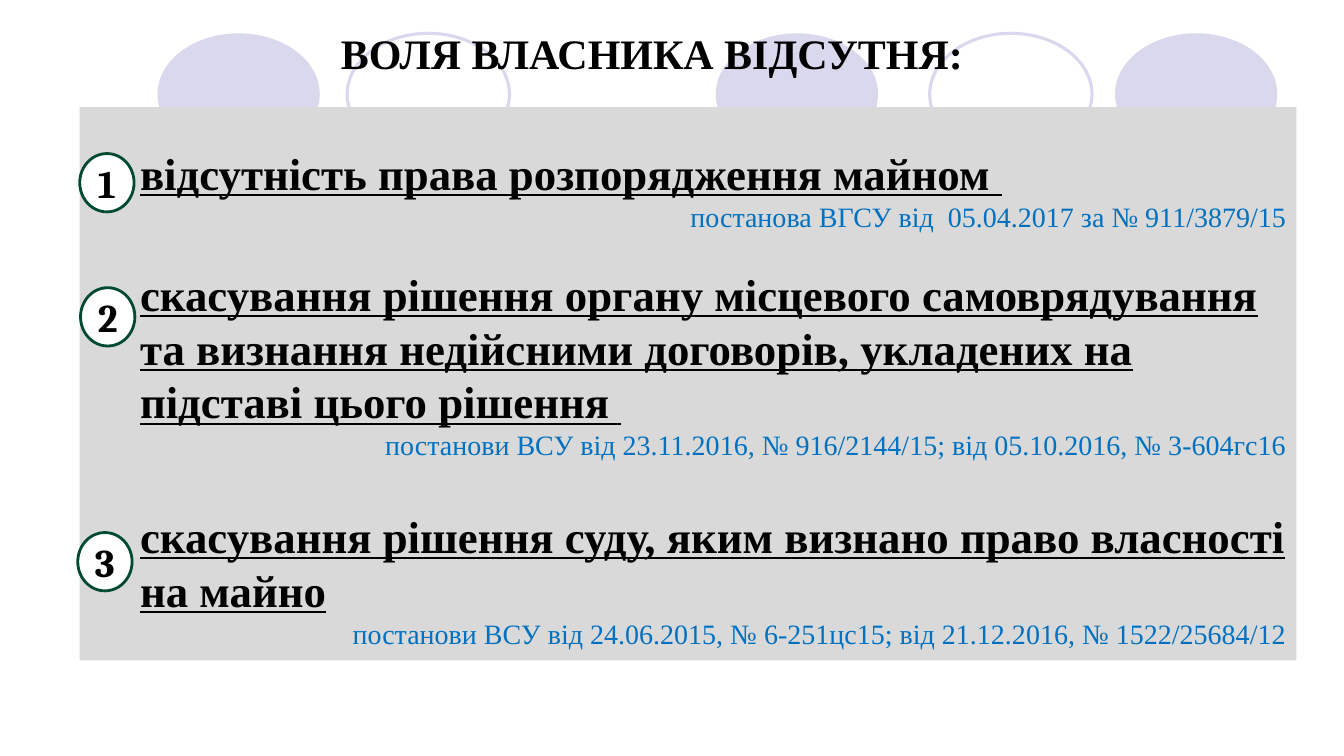
from dataclasses import dataclass

from pptx import Presentation
from pptx.dml.color import RGBColor
from pptx.enum.shapes import MSO_SHAPE
from pptx.enum.text import MSO_ANCHOR, PP_ALIGN
from pptx.util import Cm, Pt


@dataclass(frozen=True)
class Theme:
    """Colours, fonts and type sizes of the slide."""
    ink: str = "000000"
    paper: str = "FFFFFF"
    panel: str = "D9D9D9"
    lavender: str = "D9D8EC"
    citation: str = "0070C0"
    badge_line: str = "004A32"
    text_font: str = "Times New Roman"
    badge_font: str = "Cambria"
    title_size: int = 30
    ground_size: int = 32
    citation_size: int = 20
    badge_size: int = 28
    line_factor: float = 1.2


@dataclass(frozen=True)
class Box:
    """A rectangle measured in centimetres."""
    left: float
    top: float
    width: float
    height: float

    def lengths(self):
        """Return the four sides as slide lengths."""
        return Cm(self.left), Cm(self.top), Cm(self.width), Cm(self.height)


@dataclass(frozen=True)
class Ground:
    """A numbered ground with its case citation."""
    heading: str
    citation: str
    gap: float
    badge_left: float
    badge_top: float


THEME = Theme()
GROUNDS = [
    Ground("відсутність права розпорядження майном ",
           "постанова ВГСУ від  05.04.2017 за № 911/3879/15", 0, 0, 1.17),
    Ground("скасування рішення органу місцевого самоврядування та визнання "
           "недійсними договорів, укладених на підставі цього рішення ",
           "постанови ВСУ від 23.11.2016, № 916/2144/15; від 05.10.2016, № 3-604гс16",
           24, 0.02, 4.55),
    Ground("скасування рішення суду, яким визнано право власності на майно",
           "постанови ВСУ від 24.06.2015, № 6-251цс15; від 21.12.2016, № 1522/25684/12",
           33.6, -0.05, 10.72),
]


def add_figure(slide, kind, box, fill=None, line=None, line_width=2.0):
    """Add a flat preset shape with an optional fill and outline."""
    shape = slide.shapes.add_shape(kind, *box.lengths())
    shape.shadow.inherit = False
    if fill:
        shape.fill.solid()
        shape.fill.fore_color.rgb = RGBColor.from_string(fill)
    else:
        shape.fill.background()
    if line:
        shape.line.color.rgb = RGBColor.from_string(line)
        shape.line.width = Pt(line_width)
    else:
        shape.line.fill.background()
    return shape


def set_margins(frame, left=0, top=0, right=0, bottom=0):
    """Set the text insets in centimetres."""
    frame.margin_left, frame.margin_top = Cm(left), Cm(top)
    frame.margin_right, frame.margin_bottom = Cm(right), Cm(bottom)


def write(paragraph, text, size, color, alignment, font=THEME.text_font,
          bold=False, underline=False):
    """Fill a paragraph and style its font."""
    paragraph.text = text
    paragraph.alignment = alignment
    paragraph.font.name = font
    paragraph.font.size = Pt(size)
    paragraph.font.bold = bold
    paragraph.font.underline = underline
    paragraph.font.color.rgb = RGBColor.from_string(color)


def add_backdrop(slide, box):
    """Draw the row of filled and outlined ovals."""
    oval_width = 4.09
    ovals = [(0, True), (4.78, False), (14.07, True), (19.46, False), (24.13, True)]
    for offset, filled in ovals:
        oval = Box(box.left + offset, box.top, oval_width, box.height)
        if filled:
            add_figure(slide, MSO_SHAPE.OVAL, oval, fill=THEME.lavender)
        else:
            add_figure(slide, MSO_SHAPE.OVAL, oval, line=THEME.lavender, line_width=2.25)


def add_title(slide, box):
    """Place the centred slide title."""
    frame = slide.shapes.add_textbox(*box.lengths()).text_frame
    frame.word_wrap = True
    frame.vertical_anchor = MSO_ANCHOR.MIDDLE
    set_margins(frame, top=0.69)
    write(frame.paragraphs[0], "ВОЛЯ ВЛАСНИКА ВІДСУТНЯ:", THEME.title_size,
          THEME.ink, PP_ALIGN.CENTER, bold=True)


def add_badge(slide, box, number):
    """Draw a numbered oval."""
    shape = add_figure(slide, MSO_SHAPE.OVAL, box, THEME.paper, THEME.badge_line)
    frame = shape.text_frame
    frame.vertical_anchor = MSO_ANCHOR.MIDDLE
    set_margins(frame)
    write(frame.paragraphs[0], str(number), THEME.badge_size, THEME.ink,
          PP_ALIGN.CENTER, font=THEME.badge_font, bold=True)


def add_grounds(slide, box):
    """Draw the panel of grounds, their citations and their badges."""
    frame = add_figure(slide, MSO_SHAPE.RECTANGLE, box, fill=THEME.panel).text_frame
    frame.word_wrap = True
    frame.vertical_anchor = MSO_ANCHOR.TOP
    set_margins(frame, left=1.52, top=0.97, right=0.25, bottom=0.13)
    for number, ground in enumerate(GROUNDS, start=1):
        heading = frame.paragraphs[0] if number == 1 else frame.add_paragraph()
        write(heading, ground.heading, THEME.ground_size, THEME.ink,
              PP_ALIGN.LEFT, bold=True, underline=True)
        heading.space_before = Pt(ground.gap)
        heading.line_spacing = Pt(THEME.ground_size * THEME.line_factor)
        citation = frame.add_paragraph()
        write(citation, ground.citation, THEME.citation_size, THEME.citation,
              PP_ALIGN.RIGHT)
        citation.line_spacing = Pt(THEME.citation_size * THEME.line_factor)
        badge = Box(box.left + ground.badge_left, box.top + ground.badge_top, 1.37, 1.47)
        add_badge(slide, badge, number)


def main():
    """Build and save the slide."""
    presentation = Presentation()
    presentation.slide_width = Cm(33.87)
    presentation.slide_height = Cm(19.05)
    slide = presentation.slides.add_slide(presentation.slide_layouts[6])
    add_backdrop(slide, Box(3.97, 0.84, 28.22, 3.07))
    add_title(slide, Box(4.37, 0, 24.13, 1.98))
    add_grounds(slide, Box(2.01, 2.7, 30.66, 13.94))
    presentation.save("out.pptx")


if __name__ == "__main__":
    main()
